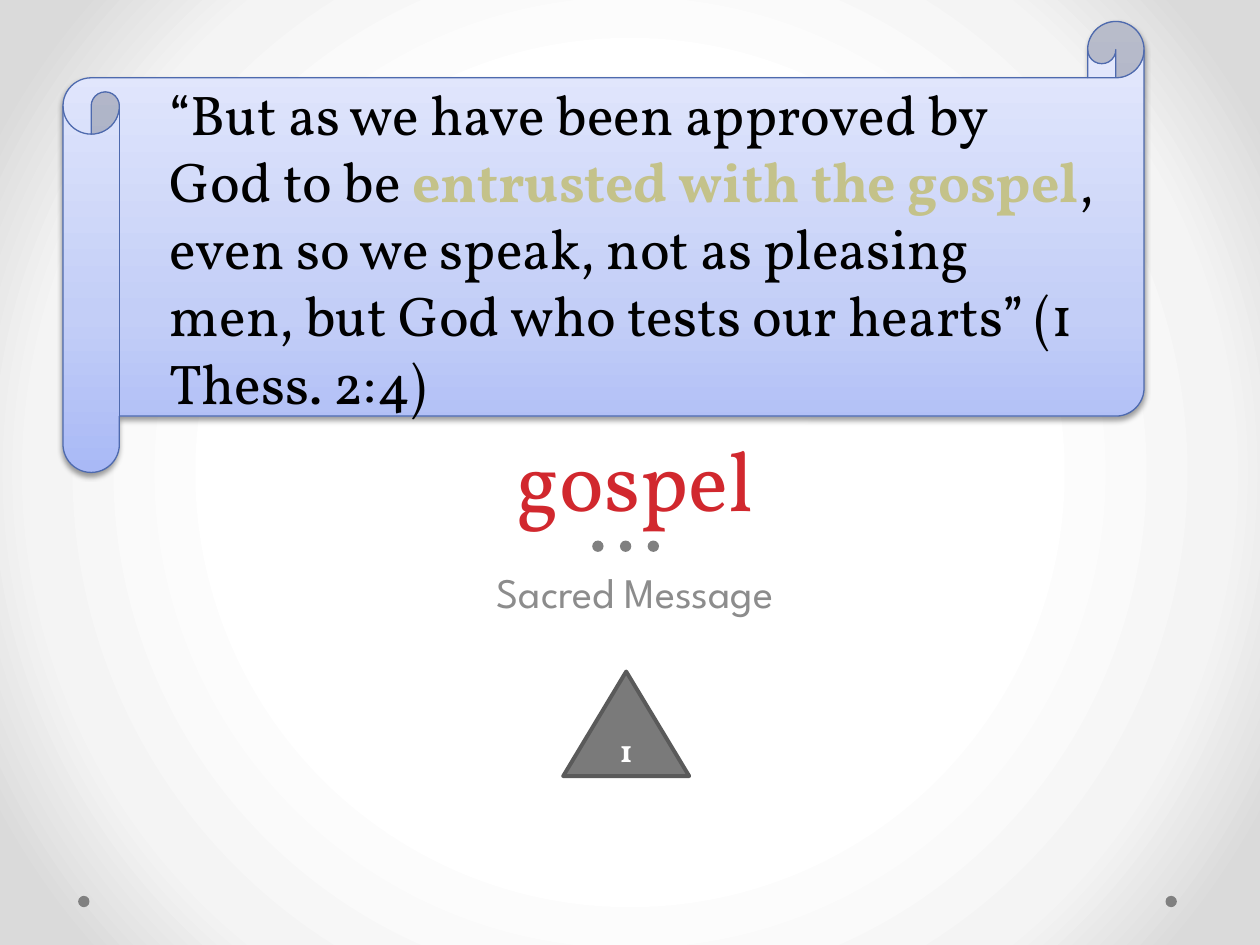
from pptx import Presentation
from pptx.dml.color import RGBColor
from pptx.enum.shapes import MSO_SHAPE as SHAPE
from pptx.enum.text import MSO_ANCHOR as ANCHOR, PP_ALIGN as ALIGN
from pptx.oxml import parse_xml
from pptx.oxml.ns import nsdecls, qn
from pptx.util import Inches, Pt

W, H = 10, 7.5
SERIF, SANS = "Vollkorn", "League Spartan"
DOT = 0.09
DOTS = [(0.62, 7.11), (9.25, 7.11)] + [(4.7 + 0.22 * i, 4.29) for i in range(3)]
BACKDROP = [(50, "FFFFFF"), (76, "F4F4F4"), (92, "DADADA")]
SCROLL = [(0, "A9B9F6"), (35, "C3CEF7"), (100, "E7EBFD")]
RADIAL = ('<a:path path="circle"><a:fillToRect l="50000" t="50000" '
          'r="50000" b="50000"/></a:path>')
UPWARD = '<a:lin ang="16200000" scaled="0"/>'

VERSE_FONT = {"size": 32, "name": SERIF, "color": "000000"}
VERSE = [
    ("“But as we have been approved by God to be ", VERSE_FONT),
    ("entrusted with the gospel", VERSE_FONT | {"color": "C4C28A", "bold": True}),
    (", even so we speak, not as pleasing men, but God who tests our hearts”"
     " (1 Thess. 2:4)", VERSE_FONT),
]
TITLE = [("gospel", {"size": 48, "name": SERIF, "color": "D1282E"})]
SUBTITLE = [("Sacred Message", {"size": 24, "name": SANS, "color": "8C8C8C"})]
NUMBER = [("1", {"size": 18, "name": SERIF, "color": "FFFFFF", "bold": True})]

TEXTS = [
    ((0.79, 3.38, 8.5, 0.86), TITLE, ALIGN.CENTER, ANCHOR.BOTTOM, 0),
    ((0.79, 4.45, 8.5, 1.24), SUBTITLE, ALIGN.CENTER, ANCHOR.TOP, 5),
    ((1.25, 0.58, 7.58, 2.79), VERSE, ALIGN.LEFT, ANCHOR.TOP, 0),
]


def rgb(value):
    """Turn a hex string into a colour."""
    return RGBColor.from_string(value)


def set_gradient(fill, parent, stops, direction):
    """Swap the solid fill under parent for a gradient."""
    fill.solid()
    gs = "".join(f'<a:gs pos="{pos * 1000}"><a:srgbClr val="{c}"/></a:gs>'
                 for pos, c in stops)
    grad = parse_xml(f'<a:gradFill {nsdecls("a")} rotWithShape="1">'
                     f'<a:gsLst>{gs}</a:gsLst>{direction}</a:gradFill>')
    parent.replace(parent.find(qn("a:solidFill")), grad)


def add_shape(slide, kind, box, fill=None, line=None, width=0):
    """Add a preset shape without its default shadow."""
    sp = slide.shapes.add_shape(kind, *map(Inches, box))
    sp.shadow.inherit = False
    if fill:
        sp.fill.solid()
        sp.fill.fore_color.rgb = rgb(fill)
    if line:
        sp.line.color.rgb = rgb(line)
        sp.line.width = Pt(width)
    else:
        sp.line.fill.background()
    return sp


def write(sp, runs, align, anchor, before=0):
    """Write one paragraph of formatted runs."""
    tf = sp.text_frame
    tf.word_wrap = True
    tf.vertical_anchor = anchor
    p = tf.paragraphs[0]
    p.alignment, p.space_before = align, Pt(before)
    for text, style in runs:
        r = p.add_run()
        r.text = text
        for key, value in style.items():
            if key == "color":
                r.font.color.rgb = rgb(value)
            else:
                setattr(r.font, key, Pt(value) if key == "size" else value)


def add_scroll(slide):
    """Add the shaded scroll behind the verse."""
    sp = add_shape(slide, SHAPE.HORIZONTAL_SCROLL, (0.5, 0.17, 8.58, 3.58),
                   line="4E6AAE", width=0.75)
    props = sp._element.spPr
    set_gradient(sp.fill, props, SCROLL, UPWARD)
    props.find(qn("a:effectLst")).append(parse_xml(
        f'<a:outerShdw {nsdecls("a")} blurRad="{Pt(3.1)}" dist="{Pt(1.6)}" '
        'dir="5400000" rotWithShape="0"><a:srgbClr val="000000">'
        '<a:alpha val="38000"/></a:srgbClr></a:outerShdw>'))


def main():
    """Build the slide and save it."""
    prs = Presentation()
    prs.slide_width, prs.slide_height = Inches(W), Inches(H)
    s = prs.slides.add_slide(prs.slide_layouts[6])
    fill = s.background.fill
    fill.solid()
    set_gradient(fill, s._element.cSld.bg.bgPr, BACKDROP, RADIAL)
    for x, y in DOTS:
        add_shape(s, SHAPE.OVAL, (x, y, DOT, DOT), "808080")
    add_scroll(s)
    for box, *text in TEXTS:
        write(s.shapes.add_textbox(*map(Inches, box)), *text)
    sp = add_shape(s, SHAPE.ISOSCELES_TRIANGLE, (4.47, 5.33, 1, 0.83),
                   "7A7A7A", "5A5A5A", 2.25)
    write(sp, NUMBER, ALIGN.CENTER, ANCHOR.MIDDLE)
    prs.save("out.pptx")


if __name__ == "__main__":
    main()
